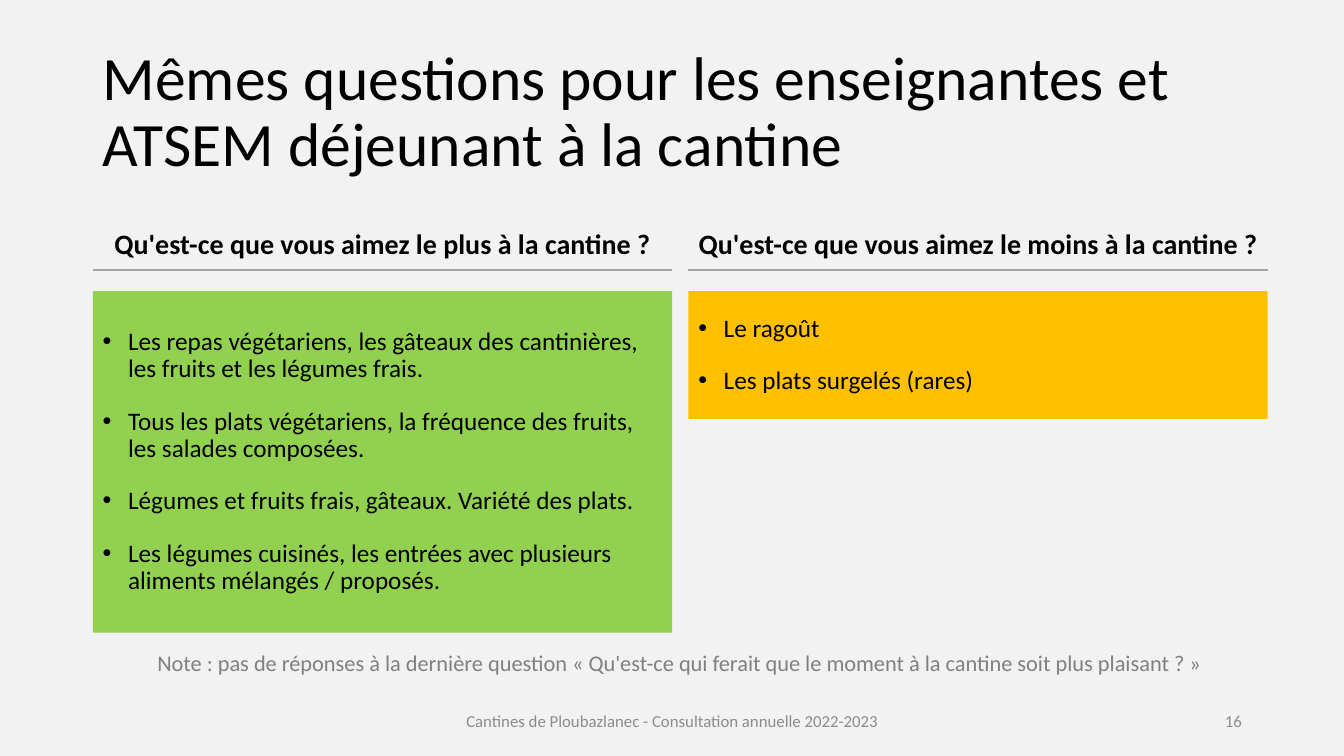
from lxml import etree
from pptx import Presentation
from pptx.dml.color import RGBColor
from pptx.enum.shapes import MSO_CONNECTOR, MSO_SHAPE
from pptx.enum.text import MSO_ANCHOR, PP_ALIGN
from pptx.oxml.ns import qn
from pptx.util import Cm, Pt

LEFT, CENTER, RIGHT = PP_ALIGN.LEFT, PP_ALIGN.CENTER, PP_ALIGN.RIGHT
MIDDLE = MSO_ANCHOR.MIDDLE
RECTANGLE = MSO_SHAPE.RECTANGLE
STRAIGHT = MSO_CONNECTOR.STRAIGHT

FONT = "Calibri"
COLORS = {
    "background": "F2F2F2",
    "text": "000000",
    "most_liked": "92D050",
    "least_liked": "FFC000",
    "rule": "A5A5A5",
    "footer": "8C8C8C",
    "note": "808080",
}

# Column geometry in centimetres
COLUMN_LEFTS = (2.34, 17.35)
COLUMN_WIDTH = 14.6
HEADING_TOP, HEADING_HEIGHT = 5.28, 1.68
RULE_TOP = 6.81
ANSWERS_TOP = 7.34


def rgb(name):
    return RGBColor.from_string(COLORS[name])


def add_text(slide, paragraphs, left, top, width, height, size=18, color="text",
             bold=False, align=LEFT, spacing=1.0, fill=None, bullets=False):
    """Add a text box, or a filled rectangle, with one paragraph per string."""
    box = (Cm(left), Cm(top), Cm(width), Cm(height))
    if fill:
        shape = slide.shapes.add_shape(RECTANGLE, *box)
        shape.shadow.inherit = False
        shape.fill.solid()
        shape.fill.fore_color.rgb = rgb(fill)
        shape.line.fill.background()
    else:
        shape = slide.shapes.add_textbox(*box)
    frame = shape.text_frame
    frame.word_wrap = True
    frame.vertical_anchor = MIDDLE
    frame.text = "\n".join(paragraphs)
    for paragraph in frame.paragraphs:
        paragraph.alignment = align
        paragraph.line_spacing = spacing
        font = paragraph.runs[0].font
        font.name, font.size, font.bold = FONT, Pt(size), bold
        font.color.rgb = rgb(color)
        if bullets:
            paragraph.space_before, paragraph.space_after = Pt(12), Pt(6)
            properties = paragraph._p.get_or_add_pPr()
            properties.set("marL", str(Cm(0.64)))
            properties.set("indent", str(-Cm(0.64)))
            etree.SubElement(properties, qn("a:buFont")).set("typeface", "Arial")
            etree.SubElement(properties, qn("a:buChar")).set("char", "•")


presentation = Presentation()
presentation.slide_width, presentation.slide_height = Cm(33.87), Cm(19.05)
slide = presentation.slides.add_slide(presentation.slide_layouts[6])
slide.background.fill.solid()
slide.background.fill.fore_color.rgb = rgb("background")

# Title
add_text(slide, ["Mêmes questions pour les enseignantes et ATSEM déjeunant à la cantine"],
         2.34, 1.02, 29.62, 3.68, size=44, spacing=0.9)

# Question columns: heading, rule and answers
columns = [
    ("Qu'est-ce que vous aimez le plus à la cantine ?", "most_liked", 8.6, [
        "Les repas végétariens, les gâteaux des cantinières, les fruits et les légumes frais.",
        "Tous les plats végétariens, la fréquence des fruits, les salades composées.",
        "Légumes et fruits frais, gâteaux. Variété des plats.",
        "Les légumes cuisinés, les entrées avec plusieurs aliments mélangés / proposés.",
    ]),
    ("Qu'est-ce que vous aimez le moins à la cantine ?", "least_liked", 3.22, [
        "Le ragoût",
        "Les plats surgelés (rares)",
    ]),
]
for left, (question, fill, height, answers) in zip(COLUMN_LEFTS, columns):
    add_text(slide, [question], left, HEADING_TOP, COLUMN_WIDTH, HEADING_HEIGHT,
             size=20, bold=True, align=CENTER)
    rule = slide.shapes.add_connector(STRAIGHT, Cm(left), Cm(RULE_TOP),
                                      Cm(left + COLUMN_WIDTH), Cm(RULE_TOP))
    rule.line.color.rgb = rgb("rule")
    rule.line.width = Pt(1.5)
    etree.SubElement(rule._element.spPr, qn("a:effectLst"))
    add_text(slide, answers, left, ANSWERS_TOP, COLUMN_WIDTH, height,
             spacing=0.9, fill=fill, bullets=True)

# Note
add_text(slide, ["Note : pas de réponses à la dernière question « Qu'est-ce qui ferait "
                 "que le moment à la cantine soit plus plaisant ? »"],
         2.54, 16.23, 29.18, 0.94, size=16, color="note", align=CENTER)

# Footer and slide number
add_text(slide, ["Cantines de Ploubazlanec - Consultation annuelle 2022-2023"],
         11.23, 17.65, 11.43, 1.02, size=12, color="footer", align=CENTER)
add_text(slide, ["16"], 23.93, 17.65, 7.62, 1.02, size=12, color="footer", align=RIGHT)

presentation.save("out.pptx")
